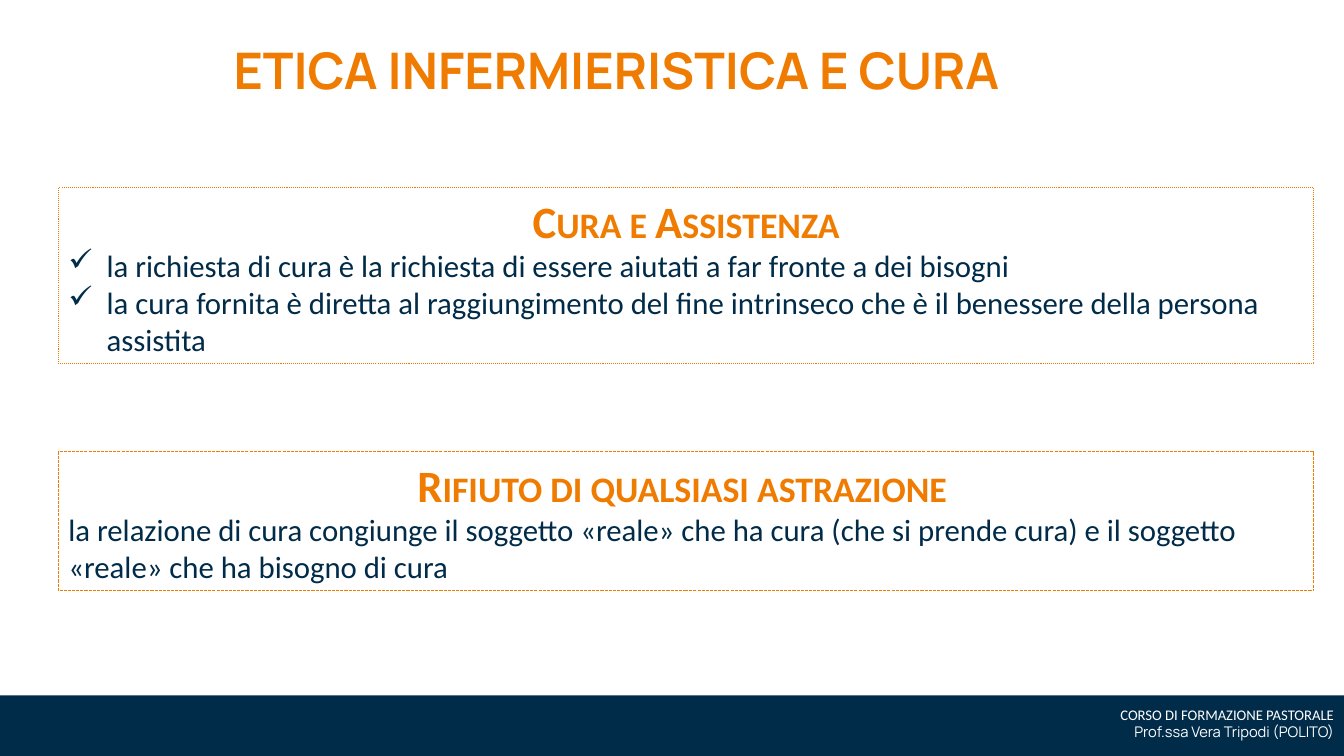
from dataclasses import dataclass
from lxml.etree import SubElement
from pptx import Presentation
from pptx.dml.color import RGBColor
from pptx.enum.dml import MSO_LINE
from pptx.enum.shapes import MSO_SHAPE
from pptx.enum.text import MSO_AUTO_SIZE, PP_ALIGN
from pptx.oxml.ns import qn
from pptx.util import Inches, Pt


@dataclass(frozen=True)
class Theme:
    orange: RGBColor = RGBColor(0xEF, 0x7B, 0x00)
    navy: RGBColor = RGBColor(0x00, 0x2B, 0x49)
    white: RGBColor = RGBColor(0xFF, 0xFF, 0xFF)
    title: float = 36
    head: float = 32
    body: float = 22
    foot: float = 10.5
    sans: str = "Calibri"
    brand: str = "Manrope"


theme = Theme()


def write(par, text, size, color, face=theme.sans, bold=False, align=PP_ALIGN.LEFT):
    run = par.add_run()
    run.text = text
    par.alignment = align
    font = par.font
    font.size, font.name, font.bold = Pt(size), face, bold
    font.color.rgb = color
    return run


def check(par):
    """Give the paragraph a hanging check-mark bullet."""
    props = par._p.get_or_add_pPr()
    props.set("marL", str(Inches(0.38)))
    props.set("indent", str(-Inches(0.38)))
    SubElement(props, qn("a:buChar")).set("char", "✓")


deck = Presentation()
deck.slide_width, deck.slide_height = Inches(13.33), Inches(7.5)
slide = deck.slides.add_slide(deck.slide_layouts[6])
shapes = slide.shapes

# Footer band
band = shapes.add_shape(MSO_SHAPE.RECTANGLE, 0, Inches(6.9), deck.slide_width, Inches(0.6))
band.shadow.inherit = False
band.fill.solid()
band.fill.fore_color.rgb = theme.navy
band.line.fill.background()

# Title
title = shapes.add_textbox(Inches(1.62), Inches(0.34), Inches(8.99), Inches(0.71)).text_frame
title.word_wrap = True
title.auto_size = MSO_AUTO_SIZE.SHAPE_TO_FIT_TEXT
write(title.paragraphs[0], "ETICA INFERMIERISTICA E CURA", theme.title, theme.orange,
      theme.brand, True, PP_ALIGN.CENTER)

# Footer text
foot = shapes.add_textbox(Inches(10.95), Inches(6.95), Inches(2.38), Inches(0.45)).text_frame
foot.word_wrap = False
foot.auto_size = MSO_AUTO_SIZE.SHAPE_TO_FIT_TEXT
write(foot.paragraphs[0], "CORSO DI FORMAZIONE PASTORALE", theme.foot, theme.white,
      align=PP_ALIGN.RIGHT)
write(foot.add_paragraph(), "Prof.ssa Vera Tripodi (POLITO)", theme.foot, theme.white,
      theme.brand, align=PP_ALIGN.RIGHT)

# Framed panels: top, height, dash, heading, bullets, body
panels = [
    (1.86, 1.75, MSO_LINE.ROUND_DOT, "Cura e Assistenza", True, [
        "la richiesta di cura è la richiesta di essere aiutati a far fronte a dei bisogni",
        "la cura fornita è diretta al raggiungimento del fine intrinseco che è il benessere "
        "della persona assistita",
    ]),
    (4.48, 1.38, MSO_LINE.SQUARE_DOT, "Rifiuto di qualsiasi astrazione ", False, [
        "la relazione di cura congiunge il soggetto «reale» che ha cura (che si prende cura) "
        "e il soggetto «reale» che ha bisogno di cura",
    ]),
]
for top, height, dash, head, listed, body in panels:
    panel = shapes.add_shape(MSO_SHAPE.RECTANGLE, Inches(0.58), Inches(top),
                             Inches(12.45), Inches(height))
    panel.shadow.inherit = False
    panel.fill.background()
    panel.line.color.rgb = theme.orange
    panel.line.width = Pt(0.75)
    panel.line.dash_style = dash
    frame = panel.text_frame
    frame.word_wrap = True
    frame.auto_size = MSO_AUTO_SIZE.SHAPE_TO_FIT_TEXT
    run = write(frame.paragraphs[0], head, theme.head, theme.orange, bold=True,
                align=PP_ALIGN.CENTER)
    run._r.get_or_add_rPr().set("cap", "small")
    for text in body:
        par = frame.add_paragraph()
        if listed:
            check(par)
        write(par, text, theme.body, theme.navy)

deck.save("out.pptx")
